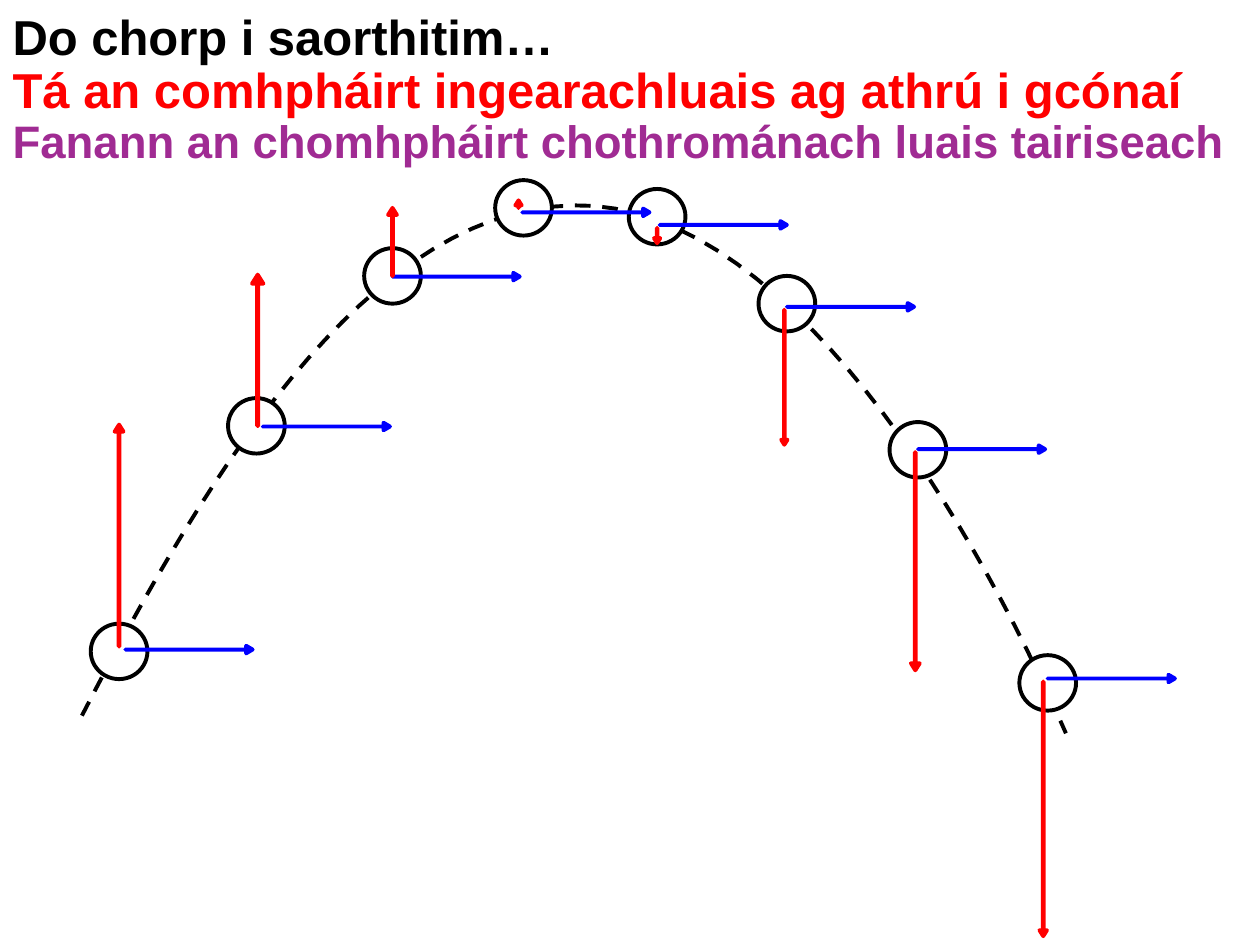
"""Build the slide on the velocity components of a body in free fall."""
from dataclasses import dataclass

from pptx import Presentation
from pptx.dml.color import RGBColor
from pptx.enum.dml import MSO_LINE_DASH_STYLE as Dash
from pptx.enum.shapes import MSO_AUTO_SHAPE_TYPE as Preset
from pptx.enum.text import MSO_ANCHOR as Anchor, MSO_AUTO_SIZE as AutoSize, PP_ALIGN as Align
from pptx.shapes.autoshape import Shape
from pptx.slide import Slide
from pptx.util import Inches, Pt

COLOURS = {
    "outline": "000000",
    "ball": "FFFFFF",
    "vertical": "FF0000",
    "horizontal": "0000FF",
    "constant": "A02B93",
}
BALL_WIDTH, BALL_HEIGHT = 0.45, 0.44
HORIZONTAL_WIDTH, HORIZONTAL_LENGTH = 0.06, 1.01
VERTICAL_ADJUST = (0.094, 0.788)
HORIZONTAL_ADJUST = (0, 0.854)
DOWN, UP, RIGHT = 0, 180, 270
CURVE_STEPS = 30


@dataclass(frozen=True)
class Arrow:
    left: float
    top: float
    width: float
    length: float
    direction: int


@dataclass(frozen=True)
class Moment:
    ball: tuple[float, float]
    horizontal: tuple[float, float]
    vertical: Arrow


@dataclass(frozen=True)
class TitleLine:
    text: str
    size: int
    colour: str


TITLE_LINES = (
    TitleLine("Do chorp i saorthitim…", 28, "outline"),
    TitleLine("Tá an comhpháirt ingearachluais ag athrú i gcónaí", 28, "vertical"),
    TitleLine("Fanann an chomhpháirt chothrománach luais tairiseach", 26, "constant"),
)
MOMENTS = (
    Moment((0.72, 4.95), (1.47, 4.65), Arrow(0.91, 3.37, 0.07, 1.76, UP)),
    Moment((1.81, 3.16), (2.56, 2.88), Arrow(2.0, 2.18, 0.09, 1.2, UP)),
    Moment((2.89, 1.97), (3.59, 1.69), Arrow(3.08, 1.65, 0.07, 0.54, UP)),
    Moment((3.93, 1.43), (4.62, 1.18), Arrow(4.09, 1.59, 0.05, 0.06, UP)),
    Moment((4.99, 1.5), (5.71, 1.28), Arrow(5.19, 1.81, 0.05, 0.12, DOWN)),
    Moment((6.02, 2.19), (6.72, 1.93), Arrow(6.2, 2.46, 0.05, 1.07, DOWN)),
    Moment((7.06, 3.35), (7.76, 3.06), Arrow(7.23, 3.59, 0.07, 1.73, DOWN)),
    Moment((8.09, 5.2), (8.79, 4.88), Arrow(8.25, 5.41, 0.06, 2.02, DOWN)),
)
TRAJECTORY = (
    ((0.65, 5.68), (1.57, 3.9), (2.87, 1.66), (4.55, 1.63)),
    ((4.55, 1.63), (6.23, 1.59), (7.75, 4.19), (8.46, 5.82)),
)


def rgb(name: str) -> RGBColor:
    return RGBColor.from_string(COLOURS[name])


def apply_format(target: object, values: dict) -> None:
    for name, value in values.items():
        setattr(target, name, value)


def style(shape: Shape, fill: str | None, line: str) -> None:
    shape.shadow.inherit = False
    if fill is None:
        shape.fill.background()
    else:
        shape.fill.solid()
        shape.fill.fore_color.rgb = rgb(fill)
    shape.line.color.rgb = rgb(line)
    shape.line.width = Pt(2.25)


def add_title(slide: Slide) -> None:
    title = slide.shapes.title
    apply_format(title, {"left": Inches(0), "top": Inches(0.05),
                         "width": Inches(9.91), "height": Inches(1.34)})
    frame = title.text_frame
    apply_format(frame, {"word_wrap": True, "vertical_anchor": Anchor.MIDDLE,
                         "auto_size": AutoSize.SHAPE_TO_FIT_TEXT})
    paragraph = frame.paragraphs[0]
    apply_format(paragraph, {"alignment": Align.LEFT, "line_spacing": 0.9})
    for index, line in enumerate(TITLE_LINES):
        if index:
            paragraph.add_line_break()
        run = paragraph.add_run()
        run.text = line.text
        apply_format(run.font, {"name": "Arial", "size": Pt(line.size), "bold": True})
        run.font.color.rgb = rgb(line.colour)


def curve_point(controls: tuple, t: float) -> tuple[int, int]:
    weights = ((1 - t) ** 3, 3 * t * (1 - t) ** 2, 3 * t ** 2 * (1 - t), t ** 3)
    x, y = (sum(w * c for w, c in zip(weights, axis)) for axis in zip(*controls))
    return Inches(x), Inches(y)


def add_trajectory(slide: Slide) -> None:
    points = [curve_point(part, step / CURVE_STEPS)
              for part in TRAJECTORY for step in range(1, CURVE_STEPS + 1)]
    builder = slide.shapes.build_freeform(*curve_point(TRAJECTORY[0], 0))
    builder.add_line_segments(points, close=False)
    trajectory = builder.convert_to_shape()
    style(trajectory, None, "outline")
    trajectory.line.dash_style = Dash.DASH


def add_ball(slide: Slide, left: float, top: float) -> None:
    ball = slide.shapes.add_shape(Preset.OVAL, Inches(left), Inches(top),
                                  Inches(BALL_WIDTH), Inches(BALL_HEIGHT))
    style(ball, "ball", "outline")


def add_arrow(slide: Slide, arrow: Arrow, colour: str, adjust: tuple[float, float]) -> None:
    velocity = slide.shapes.add_shape(Preset.DOWN_ARROW, Inches(arrow.left), Inches(arrow.top),
                                      Inches(arrow.width), Inches(arrow.length))
    velocity.rotation = arrow.direction
    for index, value in enumerate(adjust):
        velocity.adjustments[index] = value
    style(velocity, colour, colour)


def main() -> None:
    deck = Presentation()
    apply_format(deck, {"slide_width": Inches(10), "slide_height": Inches(7.5)})
    slide = deck.slides.add_slide(deck.slide_layouts[5])
    add_title(slide)
    add_trajectory(slide)
    for moment in MOMENTS:
        add_ball(slide, *moment.ball)
    for moment in MOMENTS:
        horizontal = Arrow(*moment.horizontal, HORIZONTAL_WIDTH, HORIZONTAL_LENGTH, RIGHT)
        add_arrow(slide, horizontal, "horizontal", HORIZONTAL_ADJUST)
        add_arrow(slide, moment.vertical, "vertical", VERTICAL_ADJUST)
    deck.save("out.pptx")


if __name__ == "__main__":
    main()
